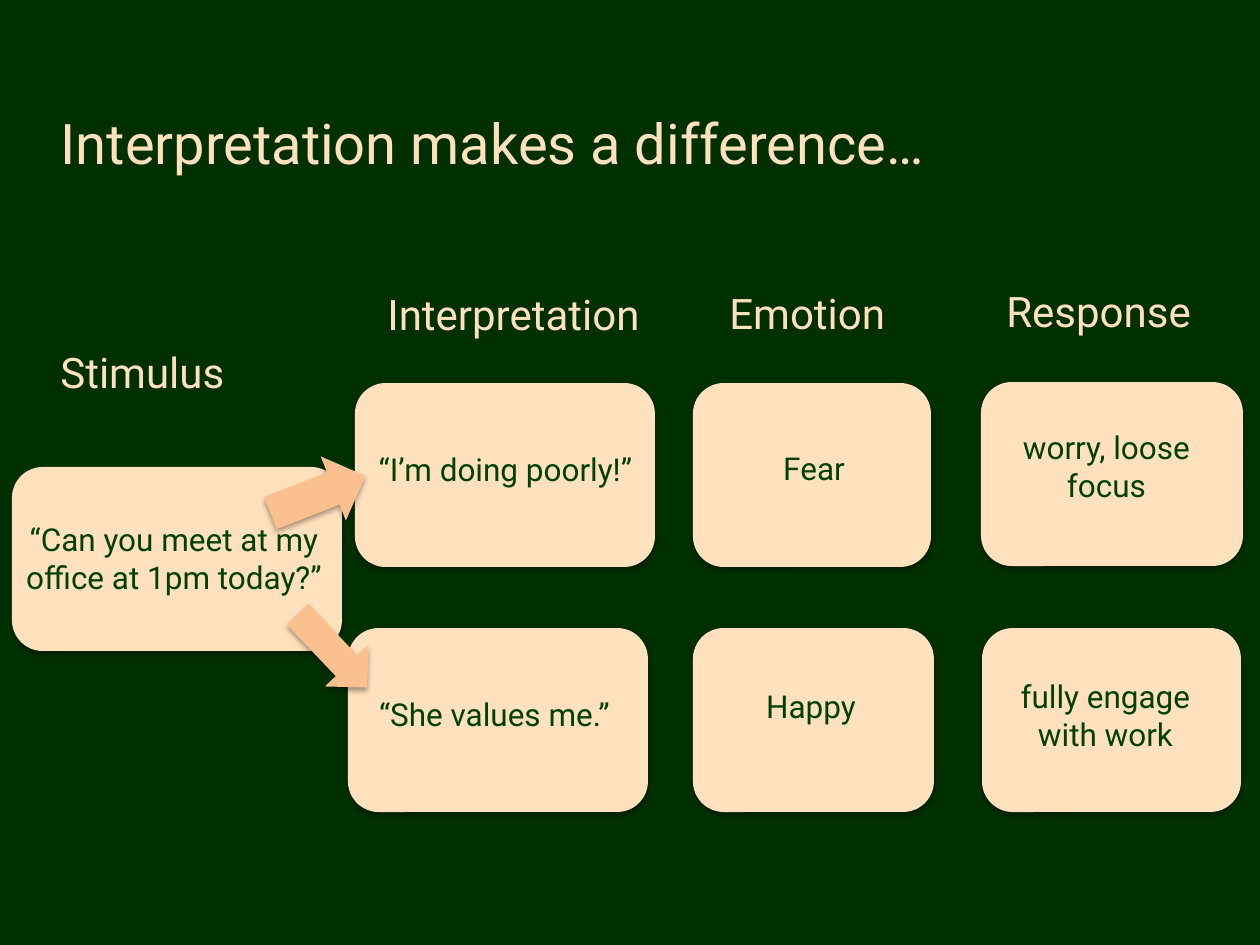
from lxml import etree
from pptx import Presentation
from pptx.dml.color import RGBColor
from pptx.enum.shapes import MSO_SHAPE as Preset
from pptx.enum.text import MSO_ANCHOR as Anchor, PP_ALIGN as Align
from pptx.oxml.ns import qn
from pptx.util import Emu, Pt

PX_PER_INCH = 126
FOREST, CREAM, LEAF, PEACH = "003000", "FFE1BD", "004100", "FAC090"


def px(length):
    return Emu(round(length * 914400 / PX_PER_INCH))


def colour(hex_code):
    return RGBColor.from_string(hex_code)


class SlideBuilder:
    font_name = "Roboto"

    def __init__(self, slide):
        self.slide = slide
        slide.background.fill.solid()
        slide.background.fill.fore_color.rgb = colour(FOREST)

    def add_words(self, frame, words, size, ink, align):
        frame.word_wrap = True
        frame.vertical_anchor = Anchor.TOP
        line = frame.paragraphs[0]
        line.alignment = align
        run = line.add_run()
        run.text = words
        run.font.name = self.font_name
        run.font.size = Pt(size)
        run.font.color.rgb = colour(ink)

    def title(self, words, left, top, width, height):
        heading = self.slide.shapes.title
        heading.left, heading.top = px(left), px(top)
        heading.width, heading.height = px(width), px(height)
        self.add_words(heading.text_frame, words, 32, CREAM, Align.LEFT)

    def text(self, words, left, top, width, height, size=18, ink=LEAF,
             align=Align.CENTER):
        box = self.slide.shapes.add_textbox(px(left), px(top), px(width), px(height))
        self.add_words(box.text_frame, words, size, ink, align)

    def shape(self, preset, fill, left, top, width, height, angle=0):
        figure = self.slide.shapes.add_shape(
            preset, px(left), px(top), px(width), px(height))
        figure.rotation = angle
        figure.fill.solid()
        figure.fill.fore_color.rgb = colour(fill)
        figure.line.fill.background()
        self.soft_shadow(figure)

    def soft_shadow(self, figure):
        figure.shadow.inherit = False
        effects = figure._element.spPr.find(qn("a:effectLst"))
        shadow = etree.SubElement(
            effects, qn("a:outerShdw"), blurRad=str(Pt(3.1)), dist=str(Pt(1.8)),
            dir="5400000", rotWithShape="0")
        black = etree.SubElement(shadow, qn("a:srgbClr"), val="000000")
        etree.SubElement(black, qn("a:alpha"), val="35000")


def main():
    deck = Presentation()
    deck.slide_width, deck.slide_height = px(1260), px(945)
    page = SlideBuilder(deck.slides.add_slide(deck.slide_layouts[5]))

    page.title("Interpretation makes a difference…", 48, 102, 1071, 81)

    # Column headings
    for heading, left, top, width in (
        ("Stimulus", 48, 340, 217),
        ("Interpretation", 375, 282, 290),
        ("Emotion", 717, 281, 217),
        ("Response", 994, 279, 241),
    ):
        page.text(heading, left, top, width, 62, 24, CREAM, Align.LEFT)

    # Cards: stimulus, then the two chains of reaction
    card_height = 184
    for left, top, width in (
        (12, 467, 330),
        (355, 383, 300), (693, 383, 238), (981, 382, 262),
        (348, 628, 300), (693, 628, 241), (982, 628, 259),
    ):
        page.shape(Preset.ROUNDED_RECTANGLE, CREAM, left, top, width, card_height)

    # Card wording
    one_line, two_lines = 50, 89
    for words, left, top, width, height in (
        ("“Can you meet at my office at 1pm today?”", 0, 514, 348, two_lines),
        ("“I’m doing poorly!”", 340, 444, 331, one_line),
        ("Fear", 684, 443, 260, one_line),
        ("worry, loose focus", 982, 422, 249, two_lines),
        ("“She values me.”", 329, 689, 331, one_line),
        ("Happy", 636, 681, 350, one_line),
        ("fully engage with work", 981, 671, 249, two_lines),
    ):
        page.text(words, left, top, width, height)

    # Arrows from the stimulus to each interpretation
    page.shape(Preset.RIGHT_ARROW, PEACH, 267, 460, 102, 69, angle=338.6)
    page.shape(Preset.RIGHT_ARROW, PEACH, 282, 621, 101, 60, angle=46.4)

    deck.save("out.pptx")


if __name__ == "__main__":
    main()
